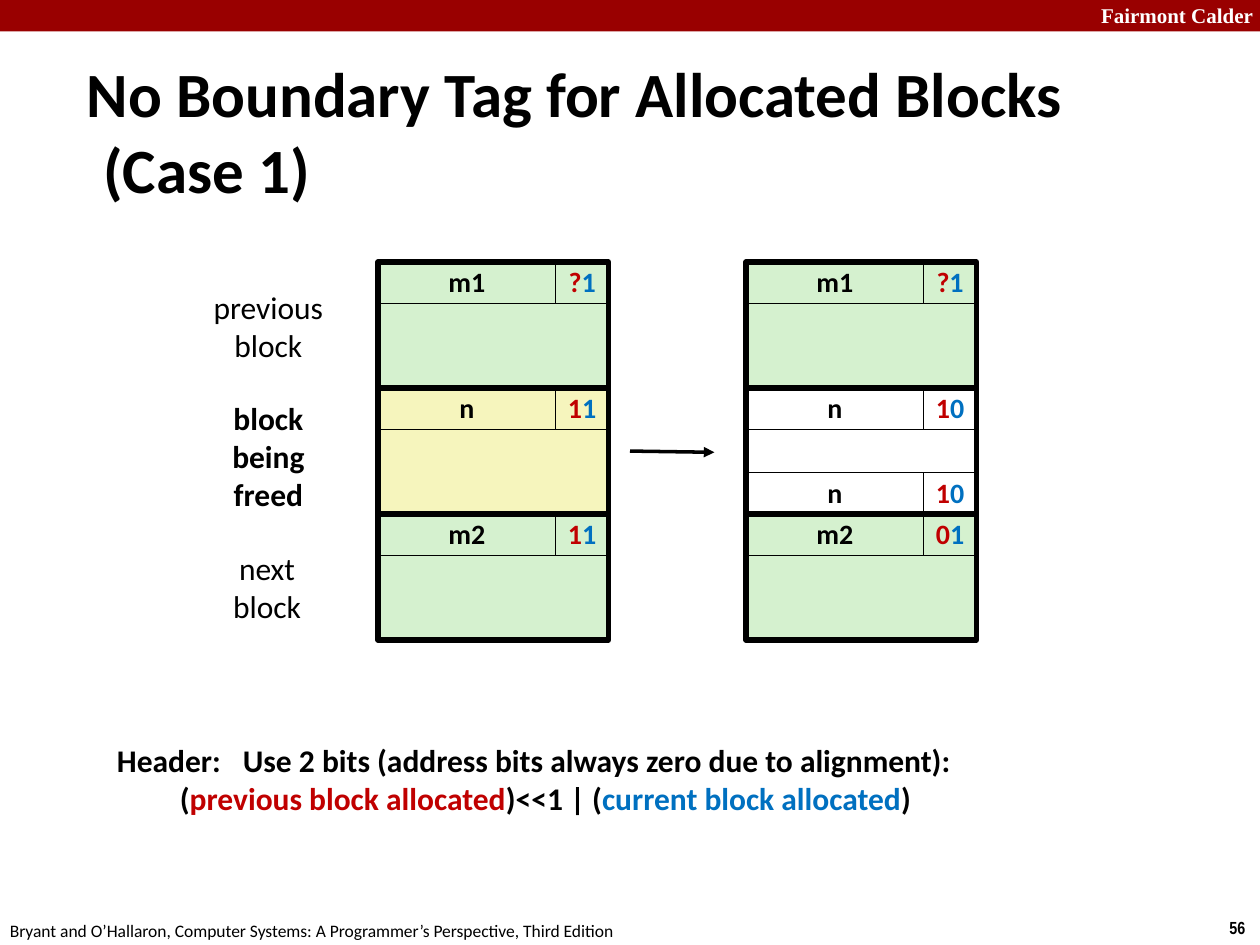
from dataclasses import dataclass

from lxml import etree
from pptx import Presentation
from pptx.dml.color import RGBColor
from pptx.enum.shapes import MSO_CONNECTOR, MSO_SHAPE
from pptx.enum.text import MSO_ANCHOR, MSO_AUTO_SIZE, PP_ALIGN
from pptx.oxml.ns import qn
from pptx.shapes.autoshape import Shape
from pptx.slide import Slide
from pptx.text.text import TextFrame
from pptx.util import Emu, Pt

RECTANGLE = MSO_SHAPE.RECTANGLE
STRAIGHT = MSO_CONNECTOR.STRAIGHT
MIDDLE = MSO_ANCHOR.MIDDLE
LEFT, CENTER = PP_ALIGN.LEFT, PP_ALIGN.CENTER
NO_FIT, FIT_SHAPE = MSO_AUTO_SIZE.NONE, MSO_AUTO_SIZE.SHAPE_TO_FIT_TEXT

BLACK = RGBColor(0x00, 0x00, 0x00)
WHITE = RGBColor(0xFF, 0xFF, 0xFF)
BANNER_RED = RGBColor(0x99, 0x00, 0x00)
PREVIOUS_RED = RGBColor(0xC0, 0x00, 0x00)
CURRENT_BLUE = RGBColor(0x00, 0x70, 0xC0)
GREEN = RGBColor(0xD5, 0xF1, 0xCF)
YELLOW = RGBColor(0xF6, 0xF5, 0xBD)

PX_PER_INCH = 100
EMU_PER_PX = 914400 // PX_PER_INCH
COLUMN_WIDTH = 183
TAG_WIDTH = 42
BLOCK_HEIGHT = 100
ROW_HEIGHT = 33
HEAP_TOP = 208


@dataclass(frozen=True)
class Span:
    text: str
    color: RGBColor = BLACK


@dataclass(frozen=True)
class Style:
    size: int
    bold: bool = False
    font: str = "Calibri"
    align: PP_ALIGN = LEFT


@dataclass(frozen=True)
class Block:
    size: str
    previous_bit: str
    current_bit: str
    fill: RGBColor
    has_footer: bool = False


@dataclass(frozen=True)
class Caption:
    left: int
    top: int
    width: int
    height: int
    lines: list[list[Span]]
    style: Style


CELL_STYLE = Style(16, bold=True, align=CENTER)
LABEL_STYLE = Style(18, align=CENTER)
FREED_STYLE = Style(18, bold=True, align=CENTER)

HEAPS = {
    300: [
        Block("m1", "?", "1", GREEN),
        Block("n", "1", "1", YELLOW),
        Block("m2", "1", "1", GREEN),
    ],
    592: [
        Block("m1", "?", "1", GREEN),
        Block("n", "1", "0", WHITE, has_footer=True),
        Block("m2", "0", "1", GREEN),
    ],
}

HEADER_RULE = [
    [Span("Header: \tUse 2 bits (address bits always zero due to alignment):")],
    [
        Span("\t("),
        Span("previous block allocated", PREVIOUS_RED),
        Span(")<<1 | ("),
        Span("current block allocated", CURRENT_BLUE),
        Span(")"),
    ],
]

CAPTIONS = [
    Caption(864, -3, 143, 30, [[Span("Fairmont Calder", WHITE)]],
            Style(12, bold=True, font="Times New Roman")),
    Caption(966, 723, 34, 27, [[Span("56")]], Style(10, bold=True, font="Arial Narrow")),
    Caption(-2, 725, 508, 27,
            [[Span("Bryant and O’Hallaron, Computer Systems: "
                   "A Programmer’s Perspective, Third Edition")]], Style(10)),
    Caption(83, 583, 706, 71, HEADER_RULE, Style(18, bold=True)),
    Caption(158, 224, 110, 71, [[Span("previous")], [Span("block")]], LABEL_STYLE),
    Caption(174, 312, 78, 101, [[Span("block")], [Span("being")], [Span("freed")]], FREED_STYLE),
    Caption(174, 431, 76, 71, [[Span("next")], [Span("block")]], LABEL_STYLE),
]


def px(length: int) -> Emu:
    return Emu(length * EMU_PER_PX)


def write(frame: TextFrame, lines: list[list[Span]], style: Style) -> None:
    paragraph = frame.paragraphs[0]
    paragraph.alignment = style.align
    for index, line in enumerate(lines):
        if index:
            paragraph.add_line_break()
        for span in line:
            run = paragraph.add_run()
            run.text = span.text
            run.font.name = style.font
            run.font.size = Pt(style.size)
            run.font.bold = style.bold
            run.font.color.rgb = span.color


def draw_box(slide: Slide, left: int, top: int, width: int, height: int,
             fill: RGBColor | None, line_width: float) -> Shape:
    box = slide.shapes.add_shape(RECTANGLE, px(left), px(top), px(width), px(height))
    box.shadow.inherit = False
    if fill is None:
        box.fill.background()
    else:
        box.fill.solid()
        box.fill.fore_color.rgb = fill
    if line_width:
        box.line.color.rgb = BLACK
        box.line.width = Pt(line_width)
    else:
        box.line.fill.background()
    return box


def draw_tag_row(slide: Slide, left: int, top: int, block: Block) -> None:
    size_width = COLUMN_WIDTH - TAG_WIDTH
    bits = [Span(block.previous_bit, PREVIOUS_RED), Span(block.current_bit, CURRENT_BLUE)]
    cells = [(left, size_width, [Span(block.size)]), (left + size_width, TAG_WIDTH, bits)]
    for cell_left, width, spans in cells:
        cell = draw_box(slide, cell_left, top, width, ROW_HEIGHT, block.fill, 0.25)
        cell.text_frame.word_wrap = False
        cell.text_frame.vertical_anchor = MIDDLE
        write(cell.text_frame, [spans], CELL_STYLE)
        cell.text_frame.paragraphs[0].line_spacing = 0.98


def draw_block(slide: Slide, left: int, top: int, block: Block) -> None:
    draw_box(slide, left, top + ROW_HEIGHT, COLUMN_WIDTH, BLOCK_HEIGHT - ROW_HEIGHT,
             block.fill, 0.25)
    draw_tag_row(slide, left, top, block)
    if block.has_footer:
        draw_tag_row(slide, left, top + BLOCK_HEIGHT - ROW_HEIGHT, block)
    draw_box(slide, left, top, COLUMN_WIDTH, BLOCK_HEIGHT, None, 3)


def draw_caption(slide: Slide, caption: Caption) -> None:
    box = slide.shapes.add_textbox(px(caption.left), px(caption.top),
                                   px(caption.width), px(caption.height))
    box.text_frame.word_wrap = False
    box.text_frame.auto_size = FIT_SHAPE
    write(box.text_frame, caption.lines, caption.style)


def draw_arrow(slide: Slide, left: int, top: int, right: int, bottom: int) -> None:
    arrow = slide.shapes.add_connector(STRAIGHT, px(left), px(top), px(right), px(bottom))
    arrow.line.color.rgb = BLACK
    arrow.line.width = Pt(2)
    etree.SubElement(arrow.line._get_or_add_ln(), qn("a:tailEnd"), type="triangle")
    etree.SubElement(arrow._element.spPr, qn("a:effectLst"))


def set_title(slide: Slide) -> None:
    title = slide.shapes.title
    title.left, title.top, title.width, title.height = px(59), px(72), px(933), px(63)
    title.text_frame.auto_size = NO_FIT
    title.text_frame.vertical_anchor = MIDDLE
    lines = [[Span("No Boundary Tag for Allocated Blocks")], [Span("(Case 1)")]]
    write(title.text_frame, lines, Style(36, bold=True))
    properties = title.text_frame.paragraphs[0]._p.get_or_add_pPr()
    properties.set("marL", str(px(13)))
    properties.set("indent", str(px(-13)))


def main() -> None:
    presentation = Presentation()
    presentation.slide_width, presentation.slide_height = px(1000), px(750)
    slide = presentation.slides.add_slide(presentation.slide_layouts[5])
    draw_box(slide, 0, 0, 1000, 25, BANNER_RED, 0)
    set_title(slide)
    for left, blocks in HEAPS.items():
        for index, block in enumerate(blocks):
            draw_block(slide, left, HEAP_TOP + index * BLOCK_HEIGHT, block)
    draw_arrow(slide, 500, 358, 567, 359)
    for caption in CAPTIONS:
        draw_caption(slide, caption)
    presentation.save("out.pptx")


if __name__ == "__main__":
    main()
